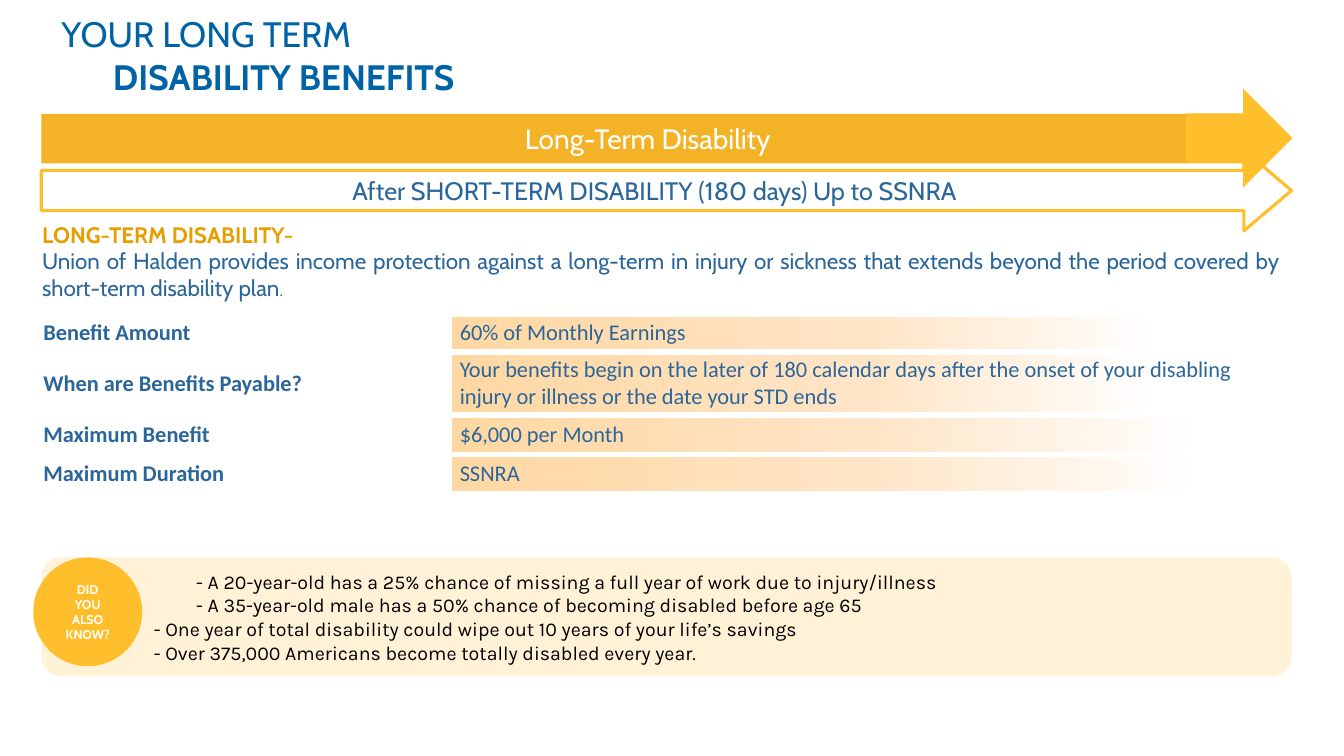
import pptx
import pptx.util
import pptx.dml.color
import pptx.enum.shapes
import pptx.enum.text
import pptx.oxml
import pptx.oxml.ns

Inches = pptx.util.Inches
Pt = pptx.util.Pt
SHAPE = pptx.enum.shapes.MSO_SHAPE
ALIGN = pptx.enum.text.PP_ALIGN
ANCHOR = pptx.enum.text.MSO_ANCHOR
NS = pptx.oxml.ns.nsdecls("a")

COLORS = {
    "title": "0063A6", "text": "2B669B", "heading": "E69F00",
    "banner": "F4B226", "gold": "FFBE2C", "badge": "FFBE2B",
    "white": "FFFFFF", "black": "000000",
    "fade_start": "FFD7A2", "fade_middle": "FFE5C7",
}


def rgb(name):
    return pptx.dml.color.RGBColor.from_string(COLORS[name])


class BenefitSlide:
    """Holds the style and the current slide."""

    def __init__(self, slide, font="Cabin"):
        self.slide = slide
        self.font = font

    def style(self, paragraph, size, color, bold=False, align=ALIGN.LEFT,
              font=None, indent=0):
        properties = paragraph._p.get_or_add_pPr()
        properties.set("marL", str(Inches(indent)))
        properties.set("indent", "0")
        paragraph.alignment = align
        paragraph.font.name = font or self.font
        paragraph.font.size = Pt(size)
        paragraph.font.bold = bold
        paragraph.font.color.rgb = rgb(color)

    def fill_text(self, frame, lines, **common):
        """Fill a text frame; each line is (text, own style)."""
        for index, (text, own) in enumerate(lines):
            paragraph = frame.paragraphs[0] if index == 0 else frame.add_paragraph()
            paragraph.text = text
            self.style(paragraph, **{**common, **own})

    def title(self, box, lines, **common):
        title = self.slide.shapes.title
        title.left, title.top, title.width, title.height = map(Inches, box)
        title.text_frame.auto_size = pptx.enum.text.MSO_AUTO_SIZE.NONE
        title.text_frame.vertical_anchor = ANCHOR.MIDDLE
        self.fill_text(title.text_frame, lines, **common)

    def textbox(self, box, lines, **common):
        frame = self.slide.shapes.add_textbox(*map(Inches, box)).text_frame
        frame.word_wrap = True
        self.fill_text(frame, lines, **common)
        return frame

    def shape(self, kind, box, fill=None, line=None, alpha=None, lines=(),
              parent=None, **common):
        shapes = (parent or self.slide).shapes
        shape = shapes.add_shape(kind, *map(Inches, box))
        shape.shadow.inherit = False
        if fill:
            shape.fill.solid()
            shape.fill.fore_color.rgb = rgb(fill)
        else:
            shape.fill.background()
        if alpha:
            color = shape.fill._xPr.find(".//" + pptx.oxml.ns.qn("a:srgbClr"))
            color.append(pptx.oxml.parse_xml(f'<a:alpha {NS} val="{alpha * 1000}"/>'))
        if line:
            shape.line.color.rgb = rgb(line)
            shape.line.width = Pt(2.25)
        else:
            shape.line.fill.background()
        shape.text_frame.word_wrap = True
        shape.text_frame.vertical_anchor = ANCHOR.MIDDLE
        self.fill_text(shape.text_frame, lines, **common)
        return shape

    def borders(self, cell):
        for side in ("lnL", "lnR", "lnT", "lnB"):
            cell._tc.get_or_add_tcPr().append(pptx.oxml.parse_xml(
                f'<a:{side} {NS} w="{Pt(4.5)}"><a:solidFill>'
                f'<a:srgbClr val="{COLORS["white"]}"/></a:solidFill></a:{side}>'))

    def fade(self, cell, end):
        """Fade the cell to white, reached at end percent of its width."""
        stops = ((0, "fade_start"), (50, "fade_middle"), (end, "white"))
        marks = "".join(f'<a:gs pos="{place * 1000}"><a:srgbClr val="{COLORS[name]}"/></a:gs>'
                        for place, name in stops)
        cell._tc.get_or_add_tcPr().append(pptx.oxml.parse_xml(
            f'<a:gradFill {NS} rotWithShape="1"><a:gsLst>{marks}</a:gsLst>'
            '<a:lin ang="0" scaled="0"/></a:gradFill>'))

    def table(self, box, widths, rows, **common):
        table = self.slide.shapes.add_table(len(rows), len(widths), *map(Inches, box)).table
        table.first_row = table.horz_banding = False
        for column, width in zip(table.columns, widths):
            column.width = Inches(width)
        for row, (height, fade_end, label, value) in zip(table.rows, rows):
            row.height = Inches(height)
            for cell, text in zip(row.cells, (label, value)):
                cell.vertical_anchor = ANCHOR.MIDDLE
                cell.margin_top = cell.margin_bottom = Inches(0.03)
                self.borders(cell)
                self.fill_text(cell.text_frame, [(text, {"bold": text == label})], **common)
            label_cell, value_cell = row.cells
            label_cell.fill.background()
            self.fade(value_cell, fade_end)


def main():
    deck = pptx.Presentation()
    deck.slide_width, deck.slide_height = Inches(13.33), Inches(7.5)
    page = BenefitSlide(deck.slides.add_slide(deck.slide_layouts[5]))

    # Title
    page.title((0, 0.11, 13.32, 0.87), [
        ("YOUR LONG TERM", {"indent": 0.51}),
        ("DISABILITY BENEFITS", {"indent": 1.02, "bold": True}),
    ], size=25.2, color="title")

    # Timeline: banner, coverage period and introduction
    page.shape(SHAPE.RECTANGLE, (0.41, 1.13, 12.03, 0.49), fill="banner",
               lines=[("Long-Term Disability", {})],
               size=20, color="white", align=ALIGN.CENTER)
    period = page.shape(SHAPE.RIGHT_ARROW, (0.41, 1.49, 12.4, 0.8), line="gold",
                        lines=[("After SHORT-TERM DISABILITY (180 days) Up to SSNRA", {})],
                        size=18, color="text", align=ALIGN.CENTER)
    period.adjustments[1] = 0.59
    intro = page.textbox((0.32, 2.14, 12.48, 0.91), [
        ("LONG-TERM DISABILITY-", {"color": "heading", "bold": True}),
        ("Union of Halden provides income protection against a long-term in injury or "
         "sickness that extends beyond the period covered by short-term disability plan",
         {"align": ALIGN.JUSTIFY}),
    ], size=16, color="text")
    full_stop = intro.paragraphs[1].add_run()
    full_stop.text = "."
    full_stop.font.size = Pt(12)

    # Benefit table: row height, fade end, label, value
    page.table((0.33, 3.12, 12.48, 1.78), (4.13, 8.35), [
        (0.37, 84, "Benefit Amount", "60% of Monthly Earnings"),
        (0.63, 84, "When are Benefits Payable?",
         "Your benefits begin on the later of 180 calendar days after the onset of your "
         "disabling injury or illness or the date your STD ends"),
        (0.39, 89, "Maximum Benefit", "$6,000 per Month"),
        (0.39, 89, "Maximum Duration", "SSNRA"),
    ], size=16, color="text", font="Calibri")

    # Banner arrowhead
    page.shape(SHAPE.RIGHT_ARROW, (11.76, 0.88, 1.06, 0.98), fill="gold")

    # Facts panel with its badge
    facts = page.slide.shapes.add_group_shape()
    page.shape(SHAPE.ROUNDED_RECTANGLE, (0.41, 5.53, 12.4, 1.18), fill="gold", alpha=19,
               parent=facts, lines=[
        ("- A 20-year-old has a 25% chance of missing a full year of work due to "
         "injury/illness", {"indent": 1.38}),
        ("- A 35-year-old male has a 50% chance of becoming disabled before age 65",
         {"indent": 1.38}),
        ("- One year of total disability could wipe out 10 years of your life’s savings", {}),
        ("- Over 375,000 Americans become totally disabled every year.", {}),
    ], size=14, color="black", font="Karla", indent=0.96)
    page.shape(SHAPE.OVAL, (0.33, 5.53, 1.08, 1.08), fill="badge", parent=facts,
               lines=[("DID\vYOU ALSO\vKNOW?", {})],
               size=9, color="white", bold=True, align=ALIGN.CENTER)

    deck.save("out.pptx")


if __name__ == "__main__":
    main()
